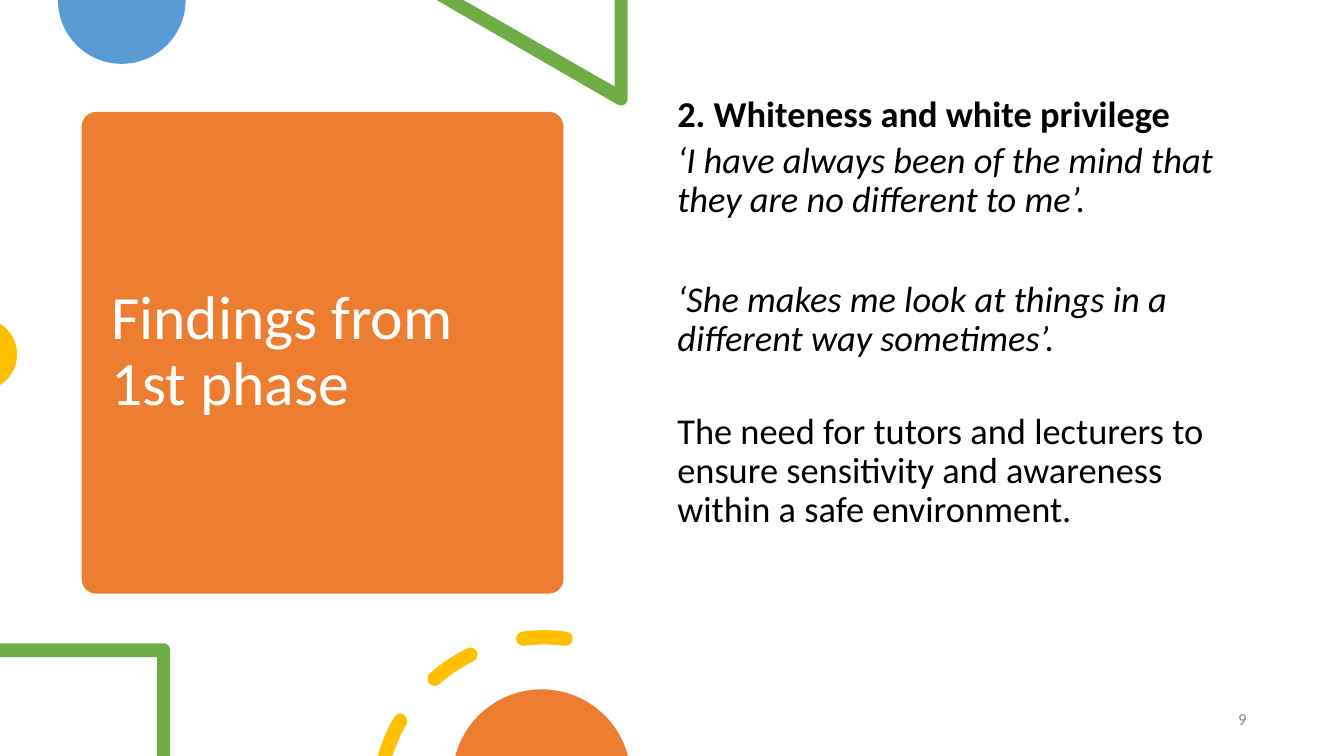
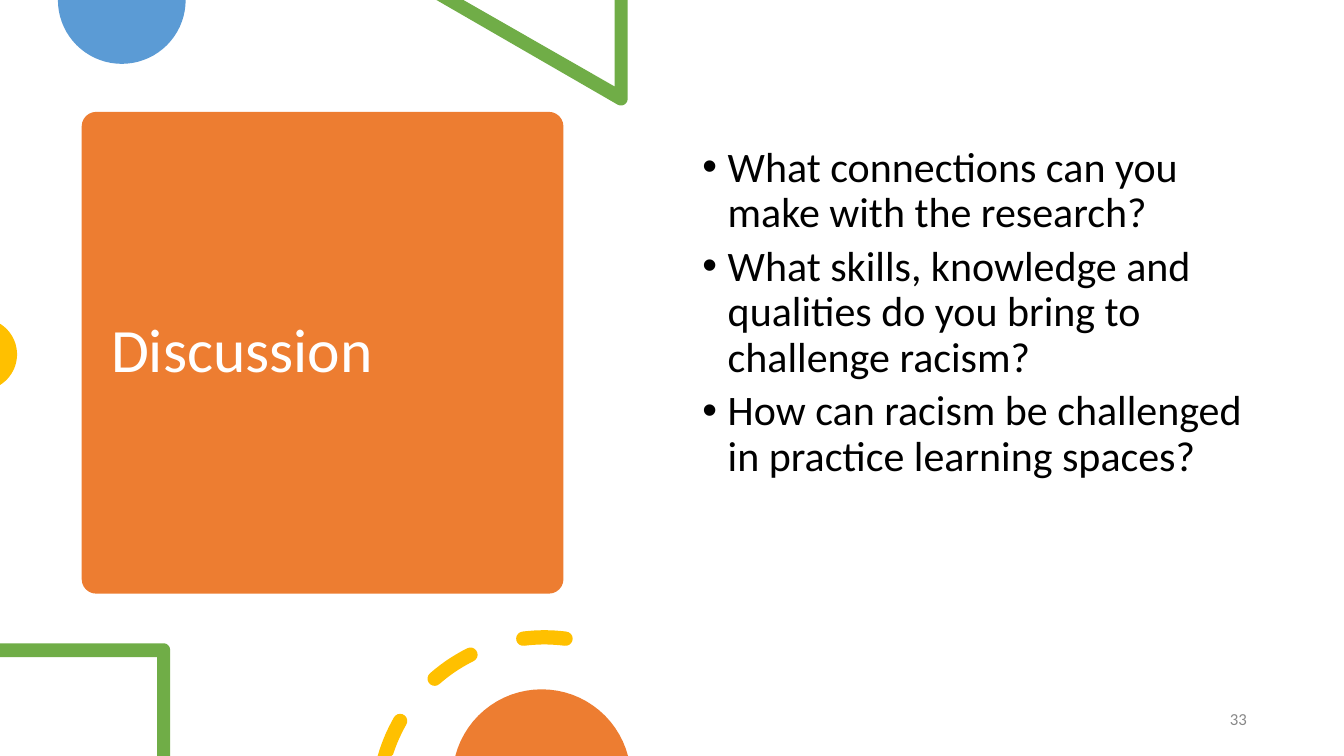
from dataclasses import dataclass
from math import cos, radians, sin

from lxml import etree
from pptx import Presentation
from pptx import util as u
from pptx.dml.color import RGBColor
from pptx.enum import shapes, text
from pptx.oxml.ns import qn


@dataclass(frozen=True)
class Theme:
    font: str = "Calibri"
    orange: str = "ED7D31"
    blue: str = "5B9BD5"
    green: str = "70AD47"
    yellow: str = "FFC000"
    white: str = "FFFFFF"
    ink: str = "000000"
    grey: str = "888888"
    title_size: int = 44
    quote_size: int = 26
    question_size: int = 30
    number_size: int = 12


WIDTH, HEIGHT = 33.87, 19.05
INSET = 0.13
BULLET_INDENT, BULLET_HANG = 1.27, 0.64


def arc(centre, radius, start, end, step=5):
    count = max(2, round(abs(end - start) / step))
    angles = [radians(start + (end - start) * i / count) for i in range(count + 1)]
    return [(centre[0] + radius * cos(a), centre[1] + radius * sin(a)) for a in angles]


def dash(start, end, start_cap=True):
    centre, radius, half = (13.72, 20.25), 4.19, 0.18

    def cap(angle, turn):
        tip = arc(centre, radius, angle, angle)[0]
        return arc(tip, half, angle + turn, angle + turn + 180, 20)

    outline = arc(centre, radius + half, start, end, 2) + cap(end, 0)
    outline += arc(centre, radius - half, end, start, 2)
    if start_cap:
        outline += cap(start, 180)
    return [(x, min(y, HEIGHT)) for x, y in outline]


class Deck:
    def __init__(self, theme):
        self.theme = theme
        self.presentation = Presentation()
        self.presentation.slide_width = u.Cm(WIDTH)
        self.presentation.slide_height = u.Cm(HEIGHT)
        self.slide = None

    def start_slide(self):
        blank = self.presentation.slide_layouts[6]
        self.slide = self.presentation.slides.add_slide(blank)

    def paint(self, shape, colour):
        shape.shadow.inherit = False
        shape.fill.solid()
        shape.fill.fore_color.rgb = RGBColor.from_string(colour)
        shape.line.fill.background()

    def outline(self, colour, *contours):
        builder = None
        for contour in contours:
            points = [(u.Cm(x), u.Cm(y)) for x, y in contour]
            if builder is None:
                builder = self.slide.shapes.build_freeform(*points[0], scale=1.0)
            else:
                builder.move_to(*points[0])
            builder.add_line_segments(points[1:], close=True)
        self.paint(builder.convert_to_shape(), colour)

    def panel(self, left, top, side):
        box = map(u.Cm, (left, top, side, side))
        card = self.slide.shapes.add_shape(shapes.MSO_SHAPE.ROUNDED_RECTANGLE, *box)
        card.adjustments[0] = 0.03
        self.paint(card, self.theme.orange)

    def bullet(self, paragraph):
        properties = paragraph._p.get_or_add_pPr()
        properties.set("marL", str(u.Cm(BULLET_INDENT)))
        properties.set("indent", str(-u.Cm(BULLET_HANG)))
        etree.SubElement(properties, qn("a:buFont"), typeface="Arial")
        etree.SubElement(properties, qn("a:buChar"), char="•")

    def words(self, box, paragraphs, size, colour, top_inset=INSET, bullets=False,
              anchor=text.MSO_ANCHOR.TOP, align=text.PP_ALIGN.LEFT):
        frame = self.slide.shapes.add_textbox(*map(u.Cm, box)).text_frame
        frame_format = {
            "word_wrap": True, "vertical_anchor": anchor,
            "margin_left": u.Cm(INSET), "margin_right": u.Cm(INSET),
            "margin_top": u.Cm(top_inset), "margin_bottom": u.Cm(INSET),
        }
        for name, value in frame_format.items():
            setattr(frame, name, value)
        for index, (space, runs) in enumerate(paragraphs):
            paragraph = frame.add_paragraph() if index else frame.paragraphs[0]
            paragraph_format = {"alignment": align, "line_spacing": 0.9,
                                "space_before": u.Pt(space)}
            for name, value in paragraph_format.items():
                setattr(paragraph, name, value)
            if bullets:
                self.bullet(paragraph)
            for wording, style in runs:
                run = paragraph.add_run()
                run.text = wording
                font_format = {"name": self.theme.font, "size": u.Pt(size), **style}
                for name, value in font_format.items():
                    setattr(run.font, name, value)
                run.font.color.rgb = RGBColor.from_string(colour)

    def title(self, wording):
        self.panel(2.06, 2.82, 12.14)
        self.words((2.67, 3.1, 10.95, 11.58), [(0, [(wording, {})])],
                   self.theme.title_size, self.theme.white,
                   anchor=text.MSO_ANCHOR.MIDDLE)

    def decorations(self):
        theme = self.theme
        self.outline(theme.blue, arc((3.07, 0), 1.61, 0, 180))
        self.outline(theme.green, [(15.82, 0), (15.49, 0), (15.49, 2.18),
                                   (11.68, 0), (11, 0)]
                     + arc((15.65, 2.49), 0.17, 120, 0, 20))
        self.outline(theme.yellow, arc((-0.48, 8.93), 0.91, -58, 58))
        self.outline(theme.green, [(0, 16.21), (0, 16.56), (3.96, 16.56),
                                   (3.96, HEIGHT), (4.29, HEIGHT)]
                     + arc((4.12, 16.38), 0.17, 0, -90, 20))
        self.outline(theme.yellow, dash(196, 209.8, start_cap=False),
                     dash(228.7, 243.6), dash(262.7, 277.3))
        self.outline(theme.orange, arc((13.65, 19.62), 2.25, 194.7, 345.3))

    def body(self, paragraphs, size, **options):
        self.words((16.94, 2.29, 14.61, 13.59), paragraphs, size,
                   self.theme.ink, **options)

    def number(self, wording):
        self.words((30.81, 17.78, 0.74, 0.74), [(0, [(wording, {})])],
                   self.theme.number_size, self.theme.grey,
                   anchor=text.MSO_ANCHOR.MIDDLE, align=text.PP_ALIGN.RIGHT)


def main():
    theme = Theme()
    deck = Deck(theme)
    bold, italic = {"bold": True}, {"italic": True}
    findings = [
        (0, [("2. Whiteness and white privilege", bold)]),
        (5, [("‘I have always been of the mind that they are no different to me’.",
              italic)]),
        (43, [("‘She makes me look at things in a different way sometimes’.", italic)]),
        (38, [("The need for tutors and lecturers to ensure sensitivity and "
               "awareness within a safe environment", {}), (".", italic)]),
    ]
    questions = [
        "What connections can you make with the research?",
        "What skills, knowledge and qualities do you bring to challenge racism?",
        "How can racism be challenged in practice learning spaces?",
    ]
    discussion = [(6 if i else 0, [(question, {})])
                  for i, question in enumerate(questions)]
    pages = [
        ("Findings from 1st phase", "9", findings, theme.quote_size, {}),
        ("Discussion", "33", discussion, theme.question_size,
         {"bullets": True, "top_inset": 1.39}),
    ]
    for heading, number, paragraphs, size, options in pages:
        deck.start_slide()
        deck.title(heading)
        deck.decorations()
        deck.body(paragraphs, size, **options)
        deck.number(number)
    deck.presentation.save("out.pptx")


if __name__ == "__main__":
    main()
